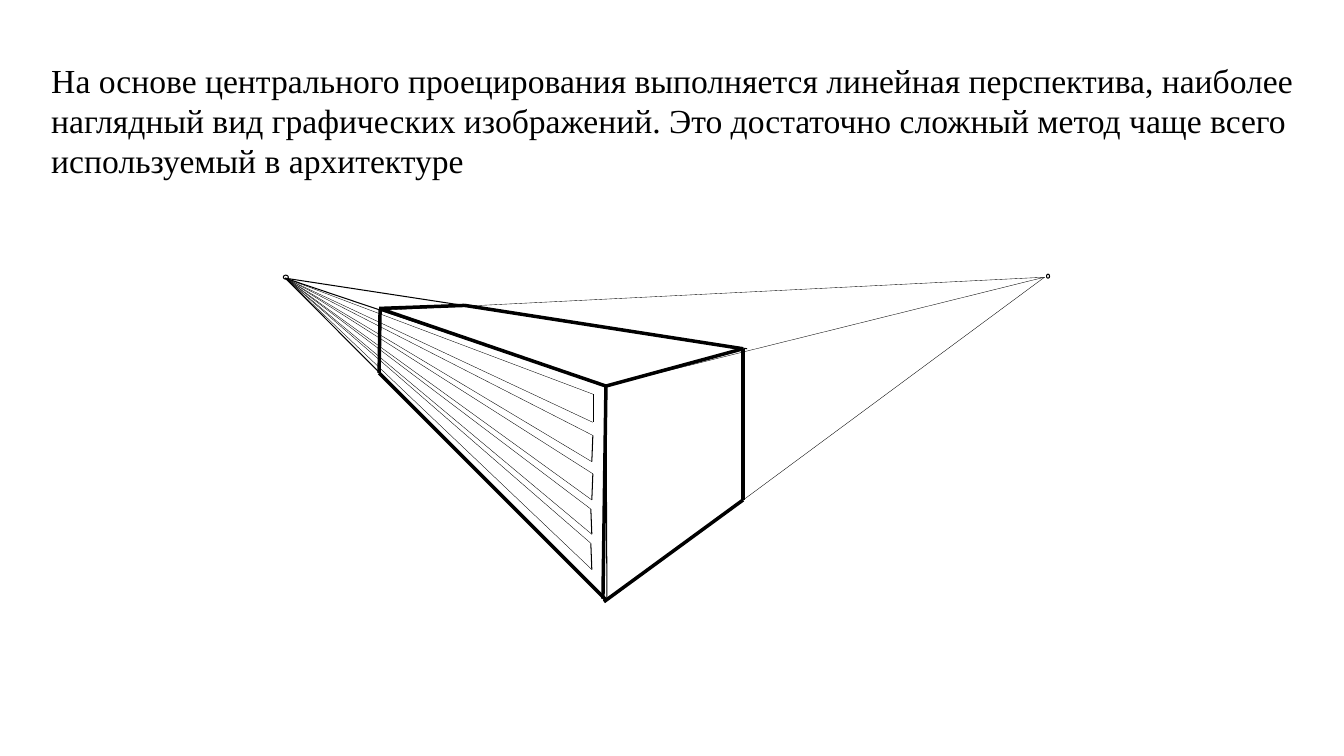
from typing import NamedTuple

from lxml.etree import SubElement
from pptx import Presentation
from pptx.dml.color import RGBColor
from pptx.enum.shapes import MSO_CONNECTOR, MSO_SHAPE
from pptx.oxml.ns import qn
from pptx.util import Inches, Pt

COLORS = {"ink": "000000", "paper": "FFFFFF"}
FONT = "Times New Roman"
HAIR, THIN, BOLD = 0.25, 0.75, 2.5


class Point(NamedTuple):
    x: float
    y: float


class Line(NamedTuple):
    start: Point
    end: Point
    width: float


class Window(NamedTuple):
    top: Point
    bottom: Point
    width: float


class Marker(NamedTuple):
    left: float
    top: float
    width: float
    height: float


LEFT_VP = Point(2.83, 2.76)
RIGHT_VP = Point(10.36, 2.75)

# Corners of the building
NEAR_TOP, NEAR_BOTTOM = Point(6.01, 3.83), Point(6.02, 5.96)
LEFT_TOP, LEFT_BOTTOM = Point(3.76, 3.06), Point(3.76, 3.7)
RIGHT_TOP, RIGHT_BOTTOM = Point(7.37, 3.46), Point(7.37, 4.96)
BACK_TOP = Point(4.61, 3.03)

MARKERS = [Marker(2.81, 2.73, 0.05, 0.04), Marker(10.38, 2.72, 0.03, 0.04)]

RAYS = [
    Line(NEAR_TOP, NEAR_BOTTOM, THIN),
    Line(LEFT_VP, NEAR_TOP, THIN),
    Line(RIGHT_VP, NEAR_TOP, HAIR),
    Line(LEFT_VP, NEAR_BOTTOM, THIN),
    Line(RIGHT_VP, NEAR_BOTTOM, HAIR),
    Line(LEFT_VP, Point(7.41, 3.46), THIN),
    Line(RIGHT_VP, Point(3.76, 3.08), HAIR),
    Line(LEFT_TOP, LEFT_BOTTOM, THIN),
]

EDGES = [
    Line(start, end, BOLD)
    for start, end in [
        (LEFT_BOTTOM, NEAR_BOTTOM),
        (NEAR_TOP, Point(5.98, 5.94)),
        (NEAR_TOP, RIGHT_TOP),
        (LEFT_TOP, NEAR_TOP),
        (RIGHT_TOP, RIGHT_BOTTOM),
        (BACK_TOP, RIGHT_TOP),
        (LEFT_BOTTOM, Point(3.77, 3.07)),
        (LEFT_TOP, BACK_TOP),
        (RIGHT_BOTTOM, Point(5.99, 5.97)),
    ]
]

WINDOWS = [
    Window(Point(5.88, 3.91), Point(5.88, 4.19), HAIR),
    Window(Point(5.88, 4.32), Point(5.87, 4.58), THIN),
    Window(Point(5.88, 4.7), Point(5.87, 4.96), THIN),
    Window(Point(5.86, 5.05), Point(5.87, 5.3), THIN),
    Window(Point(5.86, 5.39), Point(5.87, 5.65), THIN),
]


def color(name: str) -> RGBColor:
    return RGBColor.from_string(COLORS[name])


def add_text(s, text: str, *, left: float, top: float, width: float,
             height: float, size: float, font: str = FONT,
             ink: str = "ink") -> None:
    tf = s.shapes.add_textbox(Inches(left), Inches(top),
                              Inches(width), Inches(height)).text_frame
    tf.word_wrap = True
    r = tf.paragraphs[0].add_run()
    r.text = text
    r.font.size = Pt(size)
    r.font.name = font
    r.font.color.rgb = color(ink)


def add_line(s, line: Line) -> None:
    cn = s.shapes.add_connector(
        MSO_CONNECTOR.STRAIGHT,
        Inches(line.start.x), Inches(line.start.y),
        Inches(line.end.x), Inches(line.end.y))
    cn.line.color.rgb = color("ink")
    cn.line.width = Pt(line.width)
    SubElement(cn._element.spPr, qn("a:effectLst"))


def add_marker(s, marker: Marker) -> None:
    sp = s.shapes.add_shape(MSO_SHAPE.OVAL, *(Inches(v) for v in marker))
    sp.shadow.inherit = False
    sp.fill.solid()
    sp.fill.fore_color.rgb = color("paper")
    sp.line.color.rgb = color("ink")
    sp.line.width = Pt(THIN)


def add_window(s, window: Window) -> None:
    """Draw a window's near side and its two rays to the left vanishing point."""
    add_line(s, Line(window.top, window.bottom, window.width))
    for corner in (window.top, window.bottom):
        add_line(s, Line(LEFT_VP, corner, HAIR))


def main() -> None:
    prs = Presentation()
    prs.slide_width, prs.slide_height = Inches(13.33), Inches(7.5)
    s = prs.slides.add_slide(prs.slide_layouts[6])

    add_text(s, "На основе центрального проецирования выполняется линейная "
                "перспектива, наиболее наглядный вид графических изображений. "
                "Это достаточно сложный метод чаще всего используемый в "
                "архитектуре",
             left=0.41, top=0.54, width=12.52, height=1.31, size=24)
    for marker in MARKERS:
        add_marker(s, marker)
    for line in RAYS + EDGES:
        add_line(s, line)
    for window in WINDOWS:
        add_window(s, window)

    prs.save("out.pptx")


if __name__ == "__main__":
    main()
